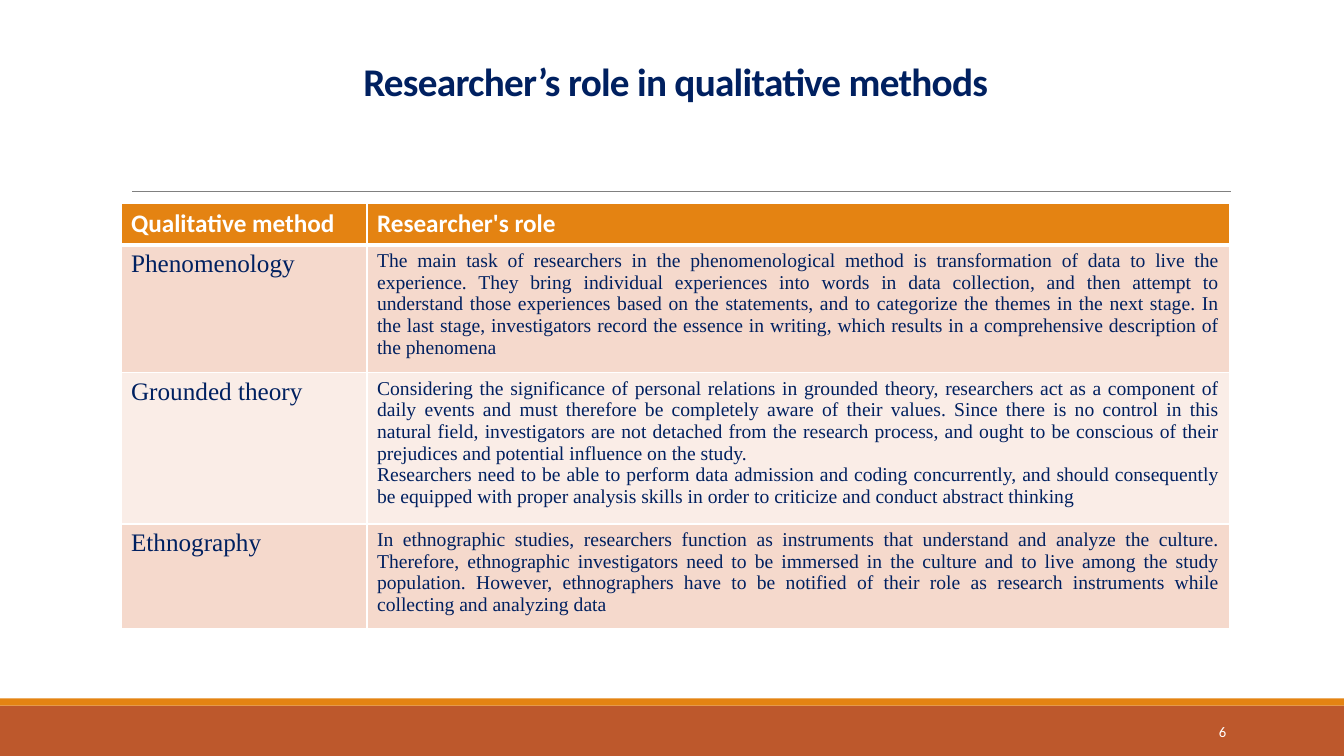
from lxml.etree import SubElement
from pptx import Presentation
from pptx.dml.color import RGBColor
from pptx.enum.shapes import MSO_CONNECTOR, MSO_SHAPE
from pptx.enum.text import MSO_ANCHOR, PP_ALIGN
from pptx.oxml.ns import qn
from pptx.util import Inches, Pt

COLORS = {"navy": "002060", "white": "FFFFFF", "orange": "E48312", "rust": "BD582C",
          "gray": "808080", "band_dark": "F5D9CC", "band_light": "FAEDE7"}
SANS, SERIF = "Calibri", "Times New Roman"
WIDTH, HEIGHT = 13.33, 7.5
LEFT, CONTENT_WIDTH = 1.2, 11
COL_WIDTHS = [2.44, 8.56]
ROW_HEIGHTS = [0.41, 1.17, 1.39, 0.96]
HEADER = ["Qualitative method", "Researcher's role"]
METHODS = [
    ("Phenomenology", [
        "The main task of researchers in the phenomenological method is transformation of data to live the "
        "experience. They bring individual experiences into words in data collection, and then attempt to "
        "understand those experiences based on the statements, and to categorize the themes in the next stage. "
        "In the last stage, investigators record the essence in writing, which results in a comprehensive "
        "description of the phenomena"]),
    ("Grounded theory", [
        "Considering the significance of personal relations in grounded theory, researchers act as a component "
        "of daily events and must therefore be completely aware of their values. Since there is no control in "
        "this natural field, investigators are not detached from the research process, and ought to be conscious "
        "of their prejudices and potential influence on the study.",
        "Researchers need to be able to perform data admission and coding concurrently, and should consequently "
        "be equipped with proper analysis skills in order to criticize and conduct abstract thinking"]),
    ("Ethnography", [
        "In ethnographic studies, researchers function as instruments that understand and analyze the culture. "
        "Therefore, ethnographic investigators need to be immersed in the culture and to live among the study "
        "population. However, ethnographers have to be notified of their role as research instruments while "
        "collecting and analyzing data"]),
]


def rgb(name):
    return RGBColor.from_string(COLORS[name])


def write(tf, paragraphs, size, font=SANS, color="navy", bold=False, align=PP_ALIGN.LEFT,
          line_spacing=None, tracking=None):
    for i, text in enumerate(paragraphs):
        p = tf.paragraphs[0] if i == 0 else tf.add_paragraph()
        p.alignment = align
        if line_spacing:
            p.line_spacing = line_spacing
        r = p.add_run()
        r.text = text
        r.font.size, r.font.name, r.font.bold = Pt(size), font, bold
        r.font.color.rgb = rgb(color)
        if tracking:
            r.font._element.set("spc", str(int(tracking * 100)))


def add_bar(slide, left, top, width, height, color):
    sp = slide.shapes.add_shape(MSO_SHAPE.RECTANGLE, *map(Inches, (left, top, width, height)))
    sp.shadow.inherit = False
    sp.fill.solid()
    sp.fill.fore_color.rgb = rgb(color)
    sp.line.fill.background()


def add_rule(slide, left, top, width):
    line = slide.shapes.add_connector(
        MSO_CONNECTOR.STRAIGHT, *map(Inches, (left, top, left + width, top)))
    line.line.color.rgb = rgb("gray")
    line.line.width = Pt(0.5)
    SubElement(line._element.spPr, qn("a:effectLst"))


def add_title(slide, left, top, width, height, text):
    title = slide.shapes.title
    title.left, title.top, title.width, title.height = map(Inches, (left, top, width, height))
    tf = title.text_frame
    tf.vertical_anchor = MSO_ANCHOR.BOTTOM
    write(tf, [text], 28, bold=True, align=PP_ALIGN.CENTER, line_spacing=0.85, tracking=-0.5)


def style_cell(cell, fill, top=1, bottom=1):
    tcPr = cell._tc.get_or_add_tcPr()
    for side, points in (("L", 1), ("R", 1), ("T", top), ("B", bottom)):
        ln = SubElement(tcPr, qn(f"a:ln{side}"), w=str(Pt(points)))
        SubElement(SubElement(ln, qn("a:solidFill")), qn("a:srgbClr"), val=COLORS["white"])
    cell.fill.solid()
    cell.fill.fore_color.rgb = rgb(fill)


def add_methods_table(slide, left, top, width):
    frame = slide.shapes.add_table(len(METHODS) + 1, len(HEADER),
                                   *map(Inches, (left, top, width, sum(ROW_HEIGHTS))))
    table = frame.table
    for column, size in zip(table.columns, COL_WIDTHS):
        column.width = Inches(size)
    for row, size in zip(table.rows, ROW_HEIGHTS):
        row.height = Inches(size)
    for c, label in enumerate(HEADER):
        cell = table.cell(0, c)
        style_cell(cell, "orange", bottom=3)
        write(cell.text_frame, [label], 18, color="white", bold=True)
    for r, (method, role) in enumerate(METHODS, 1):
        name_cell, role_cell = table.cell(r, 0), table.cell(r, 1)
        for cell in (name_cell, role_cell):
            style_cell(cell, "band_dark" if r % 2 else "band_light", top=3 if r == 1 else 1)
        write(name_cell.text_frame, [method], 18, font=SERIF)
        write(role_cell.text_frame, role, 14, font=SERIF, align=PP_ALIGN.JUSTIFY)


def add_footer(slide, top, number):
    strip = 0.07
    add_bar(slide, 0, top + strip, WIDTH, HEIGHT - top - strip, "rust")
    add_bar(slide, 0, top, WIDTH, strip, "orange")
    box = slide.shapes.add_textbox(*map(Inches, (10.83, top + 0.13, 1.43, 0.4)))
    tf = box.text_frame
    tf.word_wrap = True
    tf.vertical_anchor = MSO_ANCHOR.MIDDLE
    write(tf, [number], 10.5, color="white", align=PP_ALIGN.RIGHT)


def main():
    prs = Presentation()
    prs.slide_width, prs.slide_height = Inches(WIDTH), Inches(HEIGHT)
    slide = prs.slides.add_slide(prs.slide_layouts[5])
    add_footer(slide, 6.93, "6")
    add_rule(slide, 1.31, 1.9, 10.9)
    add_title(slide, LEFT, 0.31, CONTENT_WIDTH, 0.78, "Researcher’s role in qualitative methods")
    add_methods_table(slide, LEFT, 2.02, CONTENT_WIDTH)
    prs.save("out.pptx")


if __name__ == "__main__":
    main()
